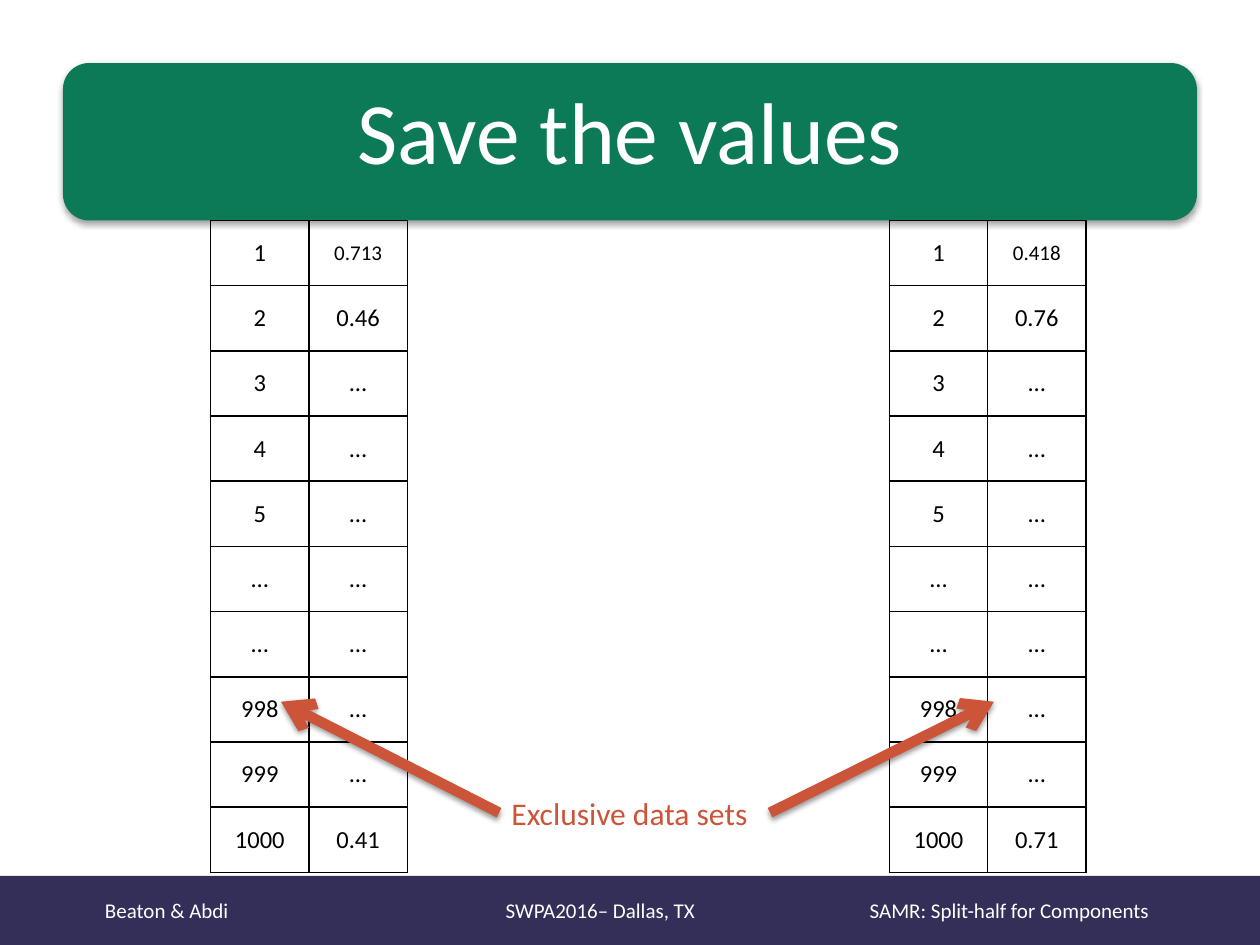
from lxml.etree import SubElement
from pptx import Presentation
from pptx.dml.color import RGBColor
from pptx.enum.shapes import MSO_CONNECTOR, MSO_SHAPE
from pptx.enum.text import MSO_ANCHOR, MSO_AUTO_SIZE, PP_ALIGN
from pptx.oxml.ns import qn
from pptx.util import Pt

FONT = "Calibri"
GREEN, NAVY, RUST = "0C7A57", "342F59", "CC5439"
BLACK, WHITE = "000000", "FFFFFF"
COLUMN_WIDTH, ROW_HEIGHT = 56.2, 37.25
TABLE_TOP = 126
LABELS = ["1", "2", "3", "4", "5", "…", "…", "998", "999", "1000"]


def color(hex_string):
    return RGBColor.from_string(hex_string)


def style_text(frame, size, hex_string, align):
    for paragraph in frame.paragraphs:
        paragraph.alignment = align
        for run in paragraph.runs:
            run.font.name = FONT
            run.font.size = Pt(size)
            run.font.bold = False
            run.font.color.rgb = color(hex_string)


def add_shadow(effects, opacity, distance):
    shadow = SubElement(effects, qn("a:outerShdw"), blurRad=str(Pt(3.1)),
                        dist=str(Pt(distance)), dir="5400000", rotWithShape="0")
    black = SubElement(shadow, qn("a:srgbClr"), val=BLACK)
    SubElement(black, qn("a:alpha"), val=str(opacity * 1000))


def add_panel(slide, preset, left, top, width, height, fill):
    panel = slide.shapes.add_shape(preset, Pt(left), Pt(top), Pt(width), Pt(height))
    panel.fill.solid()
    panel.fill.fore_color.rgb = color(fill)
    panel.line.fill.background()
    panel.shadow.inherit = False
    return panel


def add_title(slide, text):
    banner = add_panel(slide, MSO_SHAPE.ROUNDED_RECTANGLE, 36, 36, 648, 90, GREEN)
    add_shadow(banner.element.spPr.find(qn("a:effectLst")), 35, 1.8)
    banner.text_frame.text = text
    banner.text_frame.vertical_anchor = MSO_ANCHOR.TOP
    style_text(banner.text_frame, 50, WHITE, PP_ALIGN.CENTER)


def add_footer(slide, parts, starts):
    footer = add_panel(slide, MSO_SHAPE.RECTANGLE, 0, 500.5, 720, 39.5, NAVY)
    frame = footer.text_frame
    frame.text = "\t".join(parts)
    frame.margin_left = Pt(starts[0])
    frame.margin_right = 0
    frame.vertical_anchor = MSO_ANCHOR.MIDDLE
    style_text(frame, 12, WHITE, PP_ALIGN.LEFT)
    # Tab stops are measured from the left edge of the text
    properties = frame.paragraphs[0]._p.get_or_add_pPr()
    tabs = SubElement(properties, qn("a:tabLst"))
    for start in starts[1:]:
        SubElement(tabs, qn("a:tab"), pos=str(Pt(start - starts[0])), algn="l")


def add_cell_borders(cell):
    properties = cell._tc.get_or_add_tcPr()
    for side in ("lnL", "lnR", "lnT", "lnB"):
        border = SubElement(properties, qn(f"a:{side}"), w=str(Pt(1)))
        fill = SubElement(border, qn("a:solidFill"))
        SubElement(fill, qn("a:srgbClr"), val=BLACK)


def add_value_table(slide, left, values):
    count = len(LABELS)
    table = slide.shapes.add_table(
        count, 2, Pt(left), Pt(TABLE_TOP),
        Pt(2 * COLUMN_WIDTH), Pt(count * ROW_HEIGHT)).table
    table.first_row = False
    table.horz_banding = False
    for column in table.columns:
        column.width = Pt(COLUMN_WIDTH)
    for index, row_texts in enumerate(zip(LABELS, values)):
        table.rows[index].height = Pt(ROW_HEIGHT)
        for cell, text in zip(table.rows[index].cells, row_texts):
            cell.text = text
            cell.vertical_anchor = MSO_ANCHOR.MIDDLE
            # Three-decimal values are set smaller
            size = 12 if len(text) == 5 else 14
            style_text(cell.text_frame, size, BLACK, PP_ALIGN.CENTER)
            add_cell_borders(cell)
            cell.fill.background()


def add_arrow(slide, start, end):
    arrow = slide.shapes.add_connector(
        MSO_CONNECTOR.STRAIGHT, *(Pt(value) for value in (*start, *end)))
    arrow.line.color.rgb = color(RUST)
    arrow.line.width = Pt(6)
    SubElement(arrow.line._get_or_add_ln(), qn("a:tailEnd"), type="arrow")
    effects = SubElement(arrow.element.spPr, qn("a:effectLst"))
    add_shadow(effects, 38, 1.6)


def add_caption(slide, text, left, top, width, height):
    caption = slide.shapes.add_textbox(Pt(left), Pt(top), Pt(width), Pt(height))
    frame = caption.text_frame
    frame.text = text
    frame.word_wrap = False
    frame.auto_size = MSO_AUTO_SIZE.SHAPE_TO_FIT_TEXT
    style_text(frame, 18, RUST, PP_ALIGN.LEFT)


def main():
    presentation = Presentation()
    presentation.slide_width, presentation.slide_height = Pt(720), Pt(540)
    slide = presentation.slides.add_slide(presentation.slide_layouts[6])

    # Title banner and footer
    add_title(slide, "Save the values")
    add_footer(slide, ["Beaton & Abdi", "SWPA2016– Dallas, TX",
                       "SAMR: Split-half for Components"], [60, 289, 497])

    # Saved values of the two halves
    skipped = ["…"] * 7
    add_value_table(slide, 120.4, ["0.713", "0.46", *skipped, "0.41"])
    add_value_table(slide, 508.2, ["0.418", "0.76", *skipped, "0.71"])

    # Caption pointing at both tables
    add_arrow(slide, (440, 464.4), (568, 401))
    add_caption(slide, "Exclusive data sets", 285.2, 450, 154.8, 29)
    add_arrow(slide, (285.2, 464.4), (160.6, 401))

    presentation.save("out.pptx")


if __name__ == "__main__":
    main()
